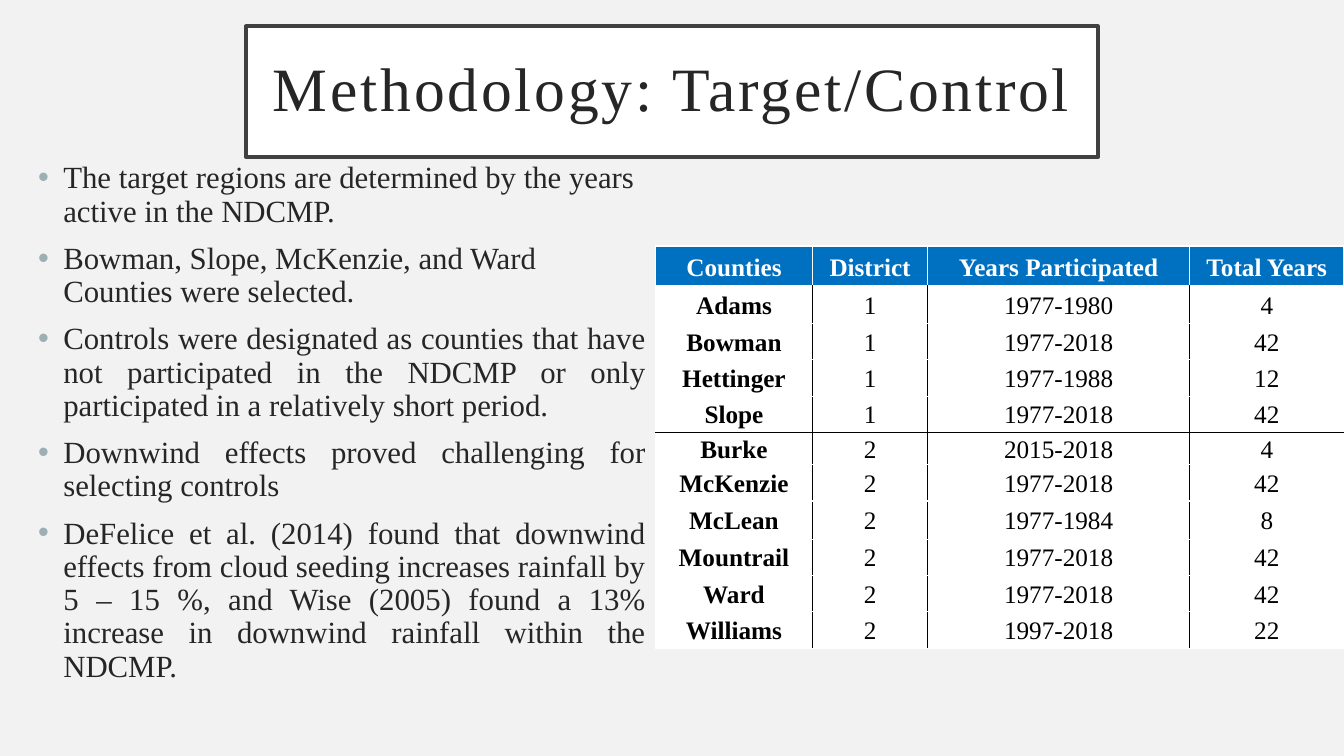
from lxml import etree
from pptx import Presentation
from pptx.dml.color import RGBColor
from pptx.enum import shapes, text
from pptx.oxml import ns
from pptx.util import Inches, Pt

FONT = "Times New Roman"
BACKGROUND = RGBColor(0xF2, 0xF2, 0xF2)
WHITE = RGBColor(0xFF, 0xFF, 0xFF)
BLACK = RGBColor(0, 0, 0)
INK = RGBColor(0x26, 0x26, 0x26)
FRAME = RGBColor(0x40, 0x40, 0x40)
HEADER_BLUE = RGBColor(0x00, 0x70, 0xC0)
BULLET = RGBColor(0x9B, 0xAF, 0xB5)

LEFT, CENTER, JUSTIFY = text.PP_ALIGN.LEFT, text.PP_ALIGN.CENTER, text.PP_ALIGN.JUSTIFY

TITLE = "Methodology: Target/Control"
POINTS = [
    ("The target regions are determined by the years active in the NDCMP.", LEFT),
    ("Bowman, Slope, McKenzie, and Ward Counties were selected.", LEFT),
    ("Controls were designated as counties that have not participated in the NDCMP "
     "or only participated in a relatively short period.", JUSTIFY),
    ("Downwind effects proved challenging for selecting controls", JUSTIFY),
    ("DeFelice et al. (2014) found that downwind effects from cloud seeding increases "
     "rainfall by 5 – 15 %, and Wise (2005) found a 13% increase in downwind rainfall "
     "within the NDCMP.", JUSTIFY),
]
HEADERS = ("Counties", "District", "Years Participated", "Total Years")
COUNTIES = [
    ("Adams", 1, "1977-1980", 4),
    ("Bowman", 1, "1977-2018", 42),
    ("Hettinger", 1, "1977-1988", 12),
    ("Slope", 1, "1977-2018", 42),
    ("Burke", 2, "2015-2018", 4),
    ("McKenzie", 2, "1977-2018", 42),
    ("McLean", 2, "1977-1984", 8),
    ("Mountrail", 2, "1977-2018", 42),
    ("Ward", 2, "1977-2018", 42),
    ("Williams", 2, "1997-2018", 22),
]
COLUMN_WIDTHS = (1.56, 1.14, 2.6, 1.53)
ROW_HEIGHTS = (0.41, 0.36, 0.36, 0.36, 0.36, 0.29, 0.36, 0.38, 0.36, 0.36, 0.36)


def write(paragraph, words, size=18, color=INK, bold=False, align=CENTER,
          line_spacing=0.9, before=0, tracking=None, bullet=False):
    paragraph.alignment = align
    paragraph.line_spacing = line_spacing
    paragraph.space_before = Pt(before)
    run = paragraph.add_run()
    run.text = words
    font = run.font
    font.name, font.size, font.bold = FONT, Pt(size), bold
    font.color.rgb = color
    if tracking:
        run._r.get_or_add_rPr().set("spc", str(tracking * 100))
    if bullet:
        props = paragraph._p.get_or_add_pPr()
        props.set("marL", str(Inches(0.25)))
        props.set("indent", str(Inches(-0.25)))
        bullet_color = etree.SubElement(props, ns.qn("a:buClr"))
        etree.SubElement(bullet_color, ns.qn("a:srgbClr"), val=str(BULLET))
        etree.SubElement(props, ns.qn("a:buFont"), typeface="Arial")
        etree.SubElement(props, ns.qn("a:buChar"), char="•")


def set_borders(cell, borders):
    """Draw the cell's edges from (color, points) pairs: left, right, top, bottom."""
    props = cell._tc.get_or_add_tcPr()
    for index, (side, (color, points)) in enumerate(zip("LRTB", borders)):
        line = etree.Element(ns.qn(f"a:ln{side}"), w=str(Pt(points)))
        fill = etree.SubElement(line, ns.qn("a:solidFill"))
        etree.SubElement(fill, ns.qn("a:srgbClr"), val=str(color))
        props.insert(index, line)


def cell_borders(row, column):
    """White outside and between rows, black between columns and districts."""
    if row == 0:
        return [(WHITE, 1)] * 3 + [(WHITE, 3)]
    district = COUNTIES[row - 1][1]
    starts_district = row > 1 and COUNTIES[row - 2][1] != district
    ends_district = row < len(COUNTIES) and COUNTIES[row][1] != district
    black_edges = (column > 0, column < len(HEADERS) - 1, starts_district, ends_district)
    borders = [(BLACK if black else WHITE, 1) for black in black_edges]
    if row == 1:
        borders[2] = (WHITE, 3)
    return borders


def add_title(slide):
    box = slide.shapes.add_shape(shapes.MSO_SHAPE.RECTANGLE, Inches(2.44), Inches(0.26),
                                 Inches(8.45), Inches(1.3))
    box.shadow.inherit = False
    box.fill.solid()
    box.fill.fore_color.rgb = WHITE
    box.line.color.rgb = FRAME
    box.line.width = Pt(2.5)
    frame = box.text_frame
    frame.word_wrap = True
    frame.vertical_anchor = text.MSO_ANCHOR.MIDDLE
    frame.margin_left = frame.margin_right = Inches(0.2)
    frame.margin_top = frame.margin_bottom = Inches(0.2)
    write(frame.paragraphs[0], TITLE, size=44, tracking=2)


def add_points(slide):
    frame = slide.shapes.add_textbox(Inches(0.28), Inches(1.56),
                                     Inches(6.22), Inches(5.69)).text_frame
    frame.word_wrap = True
    for index, (words, align) in enumerate(POINTS):
        paragraph = frame.add_paragraph() if index else frame.paragraphs[0]
        write(paragraph, words, size=22, align=align, before=10, bullet=True)


def add_county_table(slide):
    rows = [HEADERS, *COUNTIES]
    table = slide.shapes.add_table(len(rows), len(HEADERS), Inches(6.5), Inches(2.44),
                                   Inches(sum(COLUMN_WIDTHS)),
                                   Inches(sum(ROW_HEIGHTS))).table
    for column, width in zip(table.columns, COLUMN_WIDTHS):
        column.width = Inches(width)
    for row, height in zip(table.rows, ROW_HEIGHTS):
        row.height = Inches(height)
    for r, values in enumerate(rows):
        for c, value in enumerate(values):
            cell = table.cell(r, c)
            cell.vertical_anchor = text.MSO_ANCHOR.MIDDLE
            cell.margin_left = cell.margin_right = Inches(0.07)
            cell.margin_top = cell.margin_bottom = 0
            cell.fill.solid()
            cell.fill.fore_color.rgb = WHITE if r else HEADER_BLUE
            set_borders(cell, cell_borders(r, c))
            write(cell.text_frame.paragraphs[0], str(value), line_spacing=1.07,
                  color=BLACK if r else WHITE, bold=r == 0 or c == 0)


def main():
    deck = Presentation()
    deck.slide_width, deck.slide_height = Inches(13.33), Inches(7.5)
    slide = deck.slides.add_slide(deck.slide_layouts[6])
    slide.background.fill.solid()
    slide.background.fill.fore_color.rgb = BACKGROUND
    add_title(slide)
    add_points(slide)
    add_county_table(slide)
    deck.save("out.pptx")


if __name__ == "__main__":
    main()
